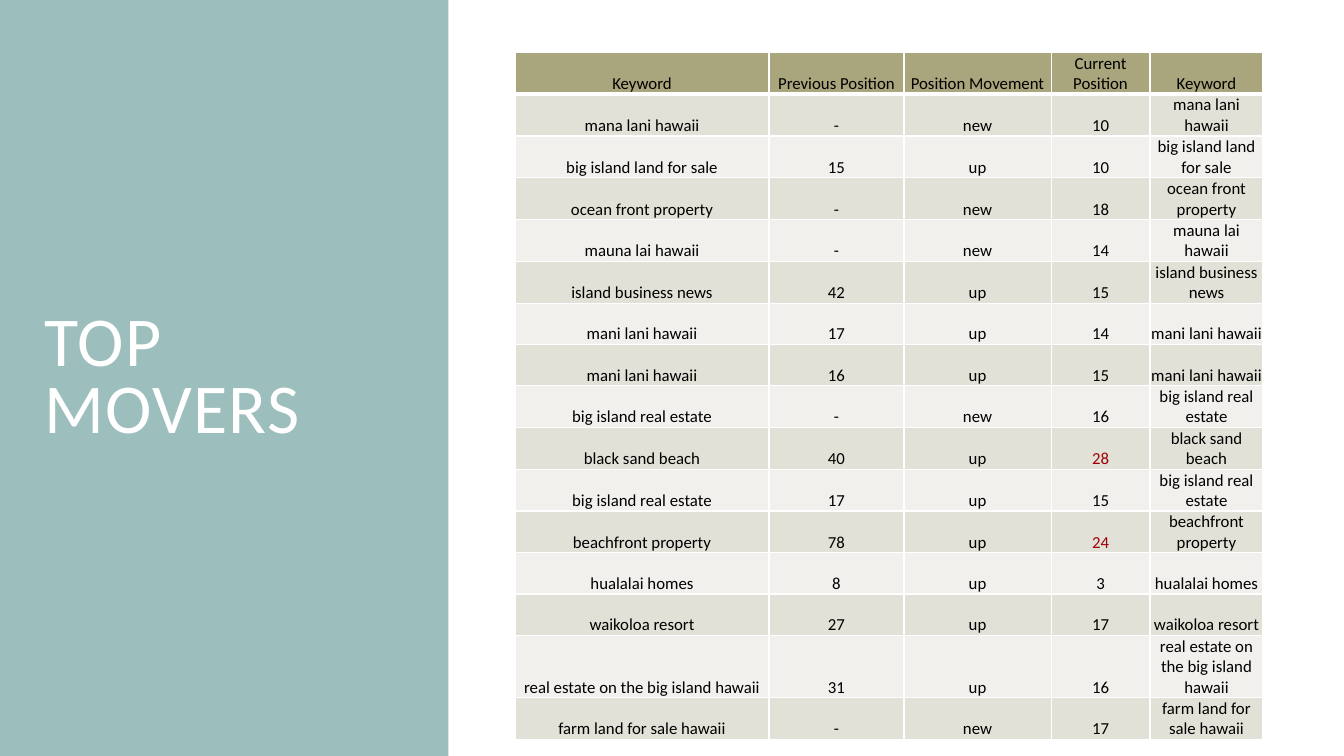
from lxml.etree import SubElement as Sub
from pptx import Presentation
from pptx.dml.color import RGBColor
from pptx.enum.shapes import MSO_SHAPE as Shape
from pptx.enum.text import MSO_ANCHOR as Anchor, PP_ALIGN as Align
from pptx.oxml.ns import qn
from pptx.util import Cm, Pt

TEAL = RGBColor(0x9C, 0xBE, 0xBD)
OLIVE = RGBColor(0xA9, 0xA5, 0x7C)
SAND = RGBColor(0xE2, 0xE1, 0xD7)
PALE = RGBColor(0xF1, 0xF0, 0xEC)
WHITE = RGBColor(0xFF, 0xFF, 0xFF)
BLACK = RGBColor(0, 0, 0)
RED = RGBColor(0x9C, 0, 0x06)
FONT = "Calibri"
LIMIT = 20

HEADS = ["Keyword", "Previous Position", "Position Movement", "Current Position", "Keyword"]
MOVERS = [
    ("mana lani hawaii", "-", "new", 10),
    ("big island land for sale", "15", "up", 10),
    ("ocean front property", "-", "new", 18),
    ("mauna lai hawaii", "-", "new", 14),
    ("island business news", "42", "up", 15),
    ("mani lani hawaii", "17", "up", 14),
    ("mani lani hawaii", "16", "up", 15),
    ("big island real estate", "-", "new", 16),
    ("black sand beach", "40", "up", 28),
    ("big island real estate", "17", "up", 15),
    ("beachfront property", "78", "up", 24),
    ("hualalai homes", "8", "up", 3),
    ("waikoloa resort", "27", "up", 17),
    ("real estate on the big island hawaii", "31", "up", 16),
    ("farm land for sale hawaii", "-", "new", 17),
]
WIDTHS = [6.4, 3.4, 3.71, 2.49, 2.85]


def write(para, text, size, color):
    """Add one styled run to a paragraph."""
    run = para.add_run()
    run.text = text
    run.font.name, run.font.size = FONT, Pt(size)
    run.font.bold = False
    run.font.color.rgb = color
    return run


def side(slide, left, top, width, height):
    """Draw the coloured panel with the slide title on it."""
    panel = slide.shapes.add_shape(Shape.RECTANGLE, Cm(left), Cm(top), Cm(width), Cm(height))
    panel.shadow.inherit = False
    panel.fill.solid()
    panel.fill.fore_color.rgb = TEAL
    panel.line.fill.background()
    title = slide.shapes.title
    title._element.addprevious(panel._element)
    title.left, title.top = Cm(left + 0.86), Cm(top + 1.78)
    title.width, title.height = Cm(width - 1.78), Cm(height - 3.45)
    frame = title.text_frame
    frame.word_wrap = True
    frame.vertical_anchor = Anchor.MIDDLE
    para = frame.paragraphs[0]
    para.alignment = Align.LEFT
    para.line_spacing = 0.8
    run = write(para, "TOP MOVERS", 50, WHITE)
    run.font._element.set("spc", "100")


def edge(cell, head):
    """Give a cell white borders, thicker below the header."""
    props = cell._tc.get_or_add_tcPr()
    for tag in ("lnL", "lnR", "lnT", "lnB"):
        thick = 3 if head and tag == "lnB" else 1
        line = Sub(props, qn(f"a:{tag}"), w=str(Pt(thick)))
        Sub(Sub(line, qn("a:solidFill")), qn("a:srgbClr"), val=str(WHITE))


def fill(cell, text, back, color, head):
    """Format one table cell and write its text."""
    edge(cell, head)
    cell.fill.solid()
    cell.fill.fore_color.rgb = back
    cell.vertical_anchor = Anchor.BOTTOM
    cell.margin_left = cell.margin_right = cell.margin_top = Cm(0.02)
    cell.margin_bottom = 0
    para = cell.text_frame.paragraphs[0]
    para.alignment = Align.CENTER
    write(para, text, 12, color)


def ranks(slide, left, top, height):
    """Draw the table of keyword positions."""
    rows = [HEADS] + [(*mover, mover[0]) for mover in MOVERS]
    table = slide.shapes.add_table(
        len(rows), len(HEADS), Cm(left), Cm(top), Cm(sum(WIDTHS)), Cm(height * len(rows))
    ).table
    for col, width in zip(table.columns, WIDTHS):
        col.width = Cm(width)
    for r, row in enumerate(rows):
        table.rows[r].height = Cm(height)
        back = OLIVE if r == 0 else (PALE, SAND)[r % 2]
        for c, item in enumerate(row):
            late = isinstance(item, int) and item > LIMIT
            fill(table.cell(r, c), str(item), back, RED if late else BLACK, r == 0)


def main():
    """Build and save the slide."""
    deck = Presentation()
    deck.slide_width, deck.slide_height = Cm(33.87), Cm(19.05)
    slide = deck.slides.add_slide(deck.slide_layouts[5])
    side(slide, 0, 0, 11.3, 19.05)
    ranks(slide, 12.98, 1.32, 1.04)
    deck.save("out.pptx")


if __name__ == "__main__":
    main()
